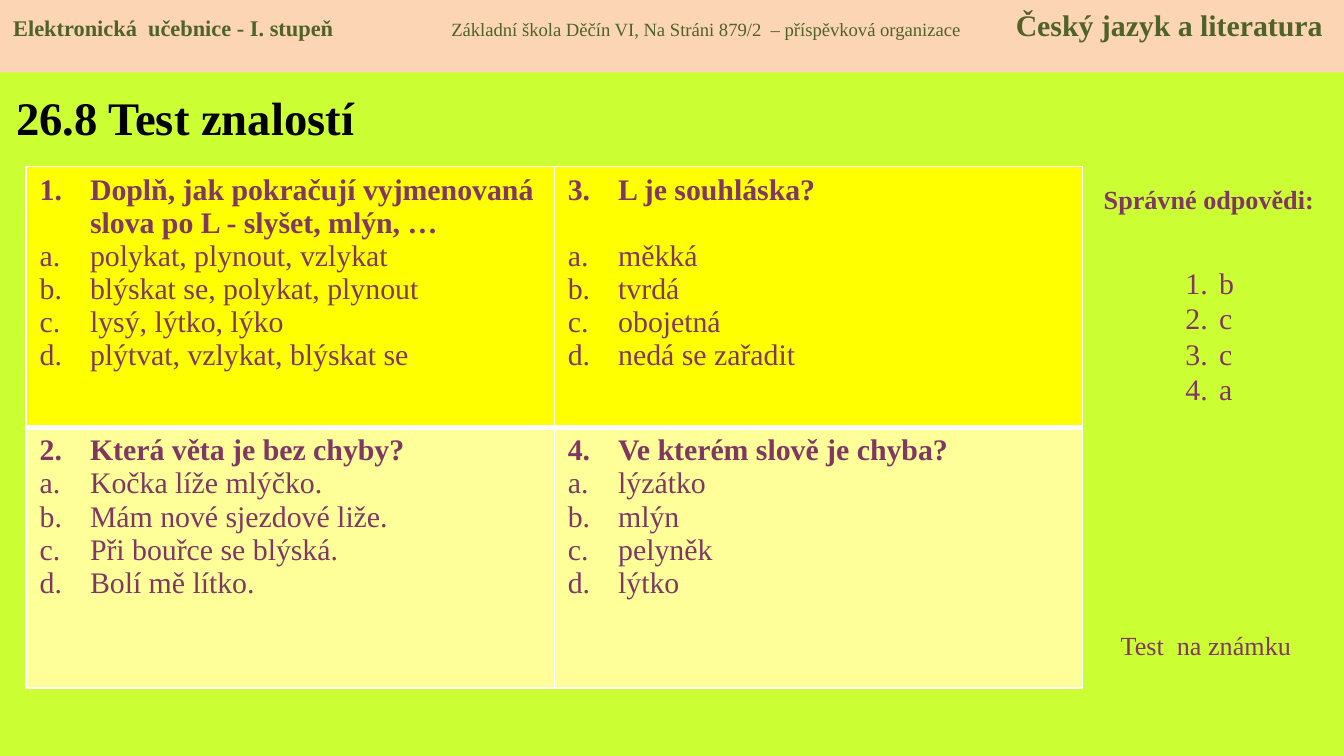
from collections import namedtuple
from lxml.etree import SubElement as Sub
from pptx import Presentation
from pptx.dml.color import RGBColor as Rgb
from pptx.enum.shapes import MSO_SHAPE as Form
from pptx.enum.text import MSO_ANCHOR as Anchor, PP_ALIGN as Align
from pptx.oxml.ns import qn
from pptx.util import Inches, Pt

Box = namedtuple("Box", "x y w h")
WIDE = Inches(10)
HIGH = WIDE * 9 // 16
UNIT = WIDE / 100
FONT = "Times New Roman"
PLUM, OLIVE, WHITE = "813763", "4F6228", "FFFFFF"

TESTS = [
    [
        ("Doplň, jak pokračují vyjmenovaná slova po L - slyšet, mlýn, …",
         ["polykat, plynout, vzlykat", "blýskat se, polykat, plynout",
          "lysý, lýtko, lýko", "plýtvat, vzlykat, blýskat se"], 0),
        ("L je souhláska?",
         ["měkká", "tvrdá", "obojetná", "nedá se zařadit"], 17.7),
    ],
    [
        ("Která věta je bez chyby?",
         ["Kočka líže mlýčko.", "Mám nové sjezdové liže.",
          "Při bouřce se blýská.", "Bolí mě lítko."], 0),
        ("Ve kterém slově je chyba?",
         ["lýzátko", "mlýn", "pelyněk", "lýtko"], 0),
    ],
]


def grid(count):
    return round(count * UNIT)


def paint(fill, tint):
    fill.solid()
    fill.fore_color.rgb = Rgb.from_string(tint)


def write(para, text, size, tint=PLUM, bold=False):
    run = para.add_run()
    run.text = text
    font = run.font
    font.name, font.size, font.bold = FONT, Pt(size), bold
    font.color.rgb = Rgb.from_string(tint)


def number(para, style, indent, start=1):
    props = para._p.get_or_add_pPr()
    props.set("marL", str(grid(indent)))
    props.set("indent", str(-grid(indent)))
    mark = Sub(props, qn("a:buAutoNum"), type=style)
    if start > 1:
        mark.set("startAt", str(start))


def lines(frame, count):
    return [frame.paragraphs[0]] + [frame.add_paragraph() for _ in range(count - 1)]


def place(shape, box):
    shape.left, shape.top, shape.width, shape.height = map(grid, box)


def edge(cell, side, width):
    line = Sub(cell._tc.get_or_add_tcPr(), qn("a:" + side), w=str(Pt(width)))
    fill = Sub(line, qn("a:solidFill"))
    Sub(fill, qn("a:srgbClr"), val=WHITE)


def header(slide, box):
    bar = slide.shapes.add_shape(Form.RECTANGLE, *map(grid, box))
    bar.shadow.inherit = False
    paint(bar.fill, "FCD5B5")
    bar.line.fill.background()
    frame = bar.text_frame
    frame.vertical_anchor = Anchor.TOP
    para = frame.paragraphs[0]
    para.alignment = Align.LEFT
    tabs = Sub(para._p.get_or_add_pPr(), qn("a:tabLst"))
    for stop in (32.6, 74.6):
        Sub(tabs, qn("a:tab"), pos=str(grid(box.w * stop / 100)), algn="l")
    write(para, "Elektronická  učebnice - I. stupeň\t", 12, OLIVE, True)
    write(para, "Základní škola Děčín VI, Na Stráni 879/2  – příspěvková organizace\t", 10, OLIVE)
    write(para, "Český jazyk a literatura", 16, OLIVE, True)


def heading(slide, box):
    title = slide.shapes.title
    place(title, box)
    frame = title.text_frame
    frame.vertical_anchor = Anchor.MIDDLE
    para = frame.paragraphs[0]
    para.alignment = Align.LEFT
    write(para, "26.8 Test znalostí", 25, "000000", True)


def ask(cell, item, index):
    query, picks, gap = item
    head, *rest = lines(cell.text_frame, len(picks) + 1)
    number(head, "arabicPeriod", 3.75, index)
    write(head, query, 16, bold=True)
    for para, pick in zip(rest, picks):
        number(para, "alphaLcPeriod", 3.75)
        write(para, pick, 16)
    if gap:
        rest[0].space_before = Pt(gap)


def quiz(slide, box):
    rows, cols = len(TESTS), len(TESTS[0])
    table = slide.shapes.add_table(rows, cols, *map(grid, box)).table
    for col in table.columns:
        col.width = grid(box.w / cols)
    for r, (row, tint) in enumerate(zip(TESTS, ("FFFF00", "FFFF99"))):
        table.rows[r].height = grid(box.h / rows)
        for c, item in enumerate(row):
            cell = table.cell(r, c)
            for side in ("lnL", "lnR", "lnT", "lnB"):
                inner = side == ("lnT" if r else "lnB")
                edge(cell, side, 3 if inner else 1)
            paint(cell.fill, tint)
            ask(cell, item, c * rows + r + 1)


def label(slide, box, text, bold, align):
    frame = slide.shapes.add_textbox(*map(grid, box)).text_frame
    frame.word_wrap = True
    para = frame.paragraphs[0]
    para.alignment = align
    write(para, text, 14, bold=bold)


def answers(slide, box):
    label(slide, Box(box.x, box.y, box.w, 3.4), "Správné odpovědi:", True, Align.CENTER)
    body = slide.placeholders[1]
    place(body, Box(box.x + 6.7, box.y + 3.3, 5.5, 19.9))
    frame = body.text_frame
    frame.vertical_anchor = Anchor.TOP
    frame.margin_top = grid(3.25)
    keys = "bcca"
    for para, key in zip(lines(frame, len(keys)), keys):
        number(para, "arabicPeriod", 2.5)
        para.alignment = Align.LEFT
        para.space_before = Pt(0)
        para.line_spacing = Pt(19)
        write(para, key, 16)
    label(slide, Box(box.x + 1.9, box.y + box.h - 3.4, 15.7, 3.4),
          "Test  na známku", False, Align.LEFT)


def main():
    deck = Presentation()
    deck.slide_width, deck.slide_height = WIDE, HIGH
    slide = deck.slides.add_slide(deck.slide_layouts[0])
    paint(slide.background.fill, "CCFF33")
    heading(slide, Box(0.2, 5.45, 31.9, 6.5))
    quiz(slide, Box(1.95, 12.4, 78.6, 38.8))
    answers(slide, Box(80.5, 13.15, 18.9, 36.6))
    header(slide, Box(0, 0, 100, 5.4))
    deck.save("out.pptx")


if __name__ == "__main__":
    main()
